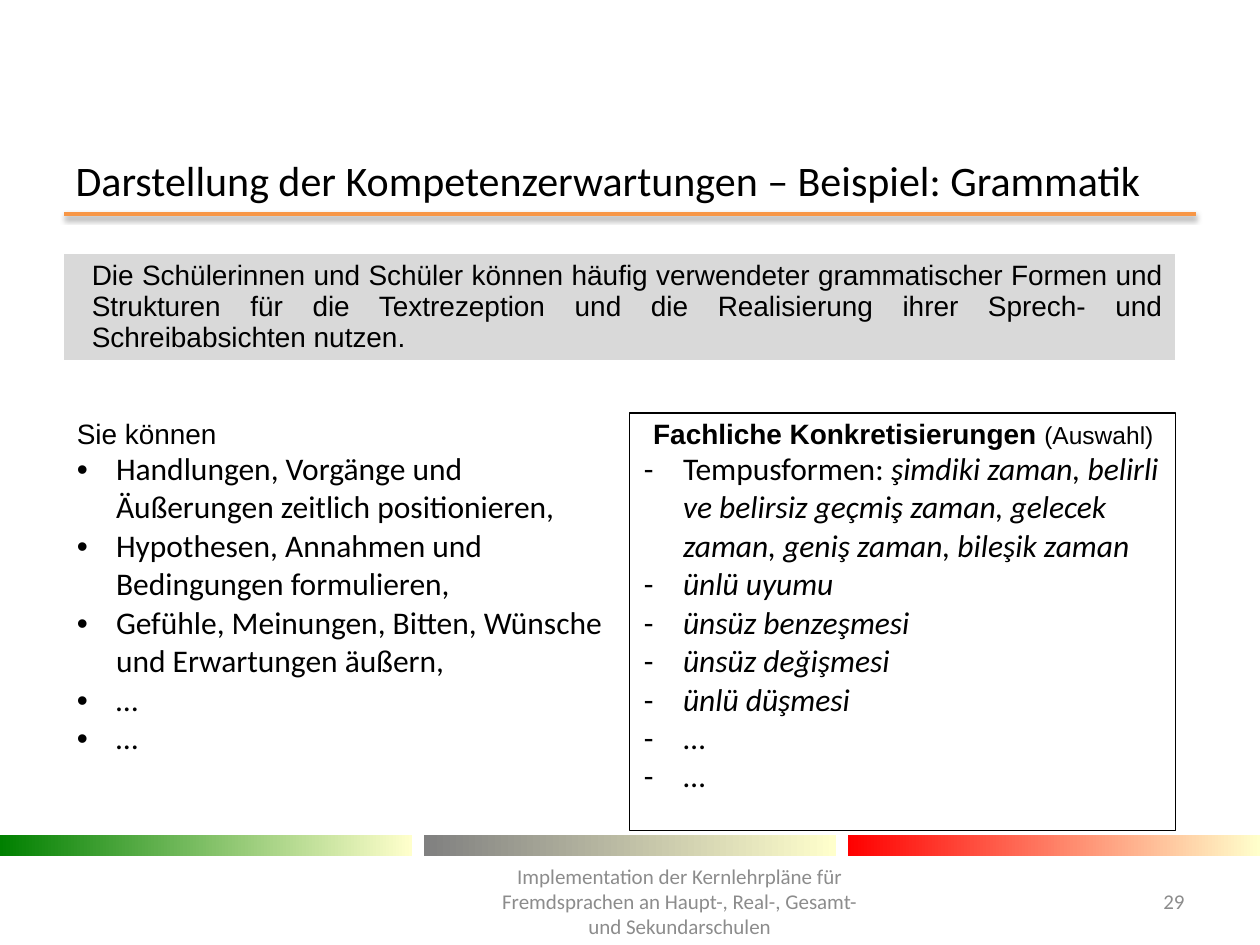
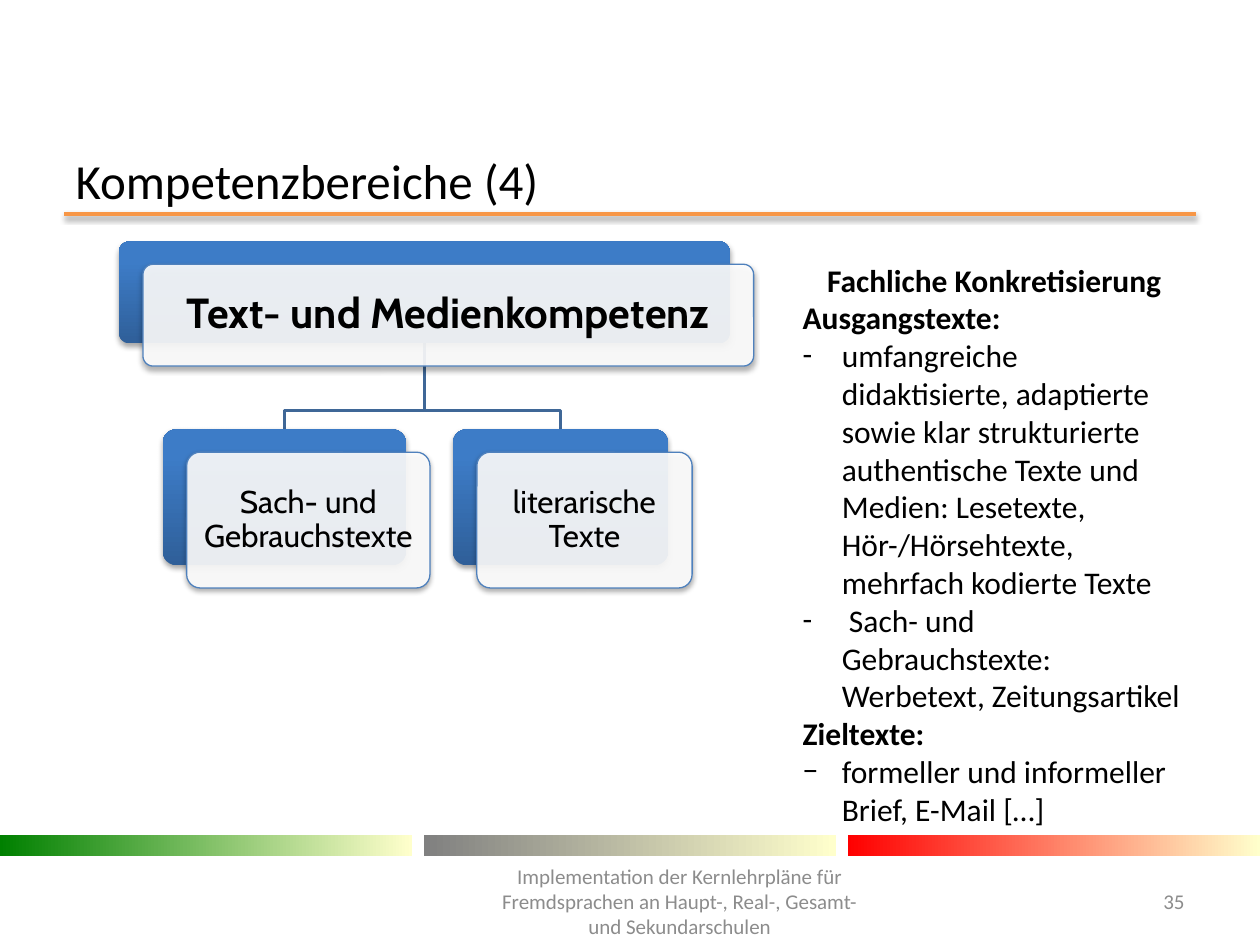
from collections import namedtuple
from lxml import etree
from pptx import Presentation
from pptx.dml.color import RGBColor
from pptx.enum.shapes import MSO_CONNECTOR, MSO_SHAPE
from pptx.enum.text import MSO_ANCHOR, PP_ALIGN
from pptx.oxml.ns import qn
from pptx.util import Pt

LEFT, MID, RIGHT, JUST = PP_ALIGN.LEFT, PP_ALIGN.CENTER, PP_ALIGN.RIGHT, PP_ALIGN.JUSTIFY
CENTER, TOP = MSO_ANCHOR.MIDDLE, MSO_ANCHOR.TOP
RECT, ROUND = MSO_SHAPE.RECTANGLE, MSO_SHAPE.ROUNDED_RECTANGLE
STRAIGHT = MSO_CONNECTOR.STRAIGHT

BLACK = RGBColor(0, 0, 0)
WHITE = RGBColor(255, 255, 255)
GRAY = RGBColor(0x8C, 0x8C, 0x8C)
PALE = RGBColor(0xD9, 0xD9, 0xD9)
ORANGE = RGBColor(0xF7, 0x96, 0x46)
CREAM = RGBColor(0xFF, 0xFF, 0xCC)
BANDS = [RGBColor(0, 0x80, 0), RGBColor(0x80, 0x80, 0x80), RGBColor(255, 0, 0)]
NAVY = RGBColor(0x2F, 0x5F, 0x99)
BLUE = RGBColor(0x3D, 0x7C, 0xC7)
EDGE = RGBColor(0x4F, 0x81, 0xBD)
LINK = RGBColor(0x3F, 0x67, 0x97)

HANG = 22.4
FOOTER = ("Implementation der Kernlehrpläne für Fremdsprachen an "
          "Haupt-, Real-, Gesamt- und Sekundarschulen")

Run = namedtuple("Run", "text size font bold ital", defaults=(18, "Calibri", False, False))
Para = namedtuple("Para", "runs align bullet gap indent", defaults=(LEFT, None, None, 0))


def points(box):
    return [Pt(v) for v in box]


def write(frame, paras, color=BLACK, anchor=TOP):
    frame.word_wrap = True
    frame.vertical_anchor = anchor
    for i, item in enumerate(paras):
        para = frame.paragraphs[0] if i == 0 else frame.add_paragraph()
        para.alignment = item.align
        if item.gap:
            para.line_spacing = item.gap
        prop = para._p.get_or_add_pPr()
        if item.bullet:
            prop.set("marL", str(Pt(HANG)))
            prop.set("indent", str(-Pt(HANG)))
            face = "Arial" if item.bullet == "•" else "Calibri"
            etree.SubElement(prop, qn("a:buFont"), typeface=face)
            etree.SubElement(prop, qn("a:buChar"), char=item.bullet)
        elif item.indent:
            prop.set("marL", str(Pt(item.indent)))
        for part in item.runs:
            run = para.add_run()
            run.text = part.text
            font = run.font
            font.size, font.name = Pt(part.size), part.font
            font.bold, font.italic = part.bold, part.ital
            font.color.rgb = color


def label(slide, box, paras, color=BLACK, anchor=TOP):
    shape = slide.shapes.add_textbox(*points(box))
    write(shape.text_frame, paras, color, anchor)


def block(slide, kind, box):
    shape = slide.shapes.add_shape(kind, *points(box))
    shape.shadow.inherit = False
    shape.line.fill.background()
    return shape


def blend(shape, first, last, angle, end=1.0):
    fill = shape.fill
    fill.gradient()
    fill.gradient_angle = angle
    for stop, color in zip(fill.gradient_stops, (first, last)):
        stop.color.rgb = color
    fill.gradient_stops[1].position = end


def fade(parent, share):
    etree.SubElement(parent, qn("a:alpha"), val=str(share * 1000))


def shade(shape, share=35):
    prop = shape._element.spPr
    effect = prop.find(qn("a:effectLst"))
    if effect is None:
        effect = etree.SubElement(prop, qn("a:effectLst"))
    cast = etree.SubElement(effect, qn("a:outerShdw"), blurRad=str(Pt(3.1)),
                            dist=str(Pt(1.7)), dir="5400000", rotWithShape="0")
    fade(etree.SubElement(cast, qn("a:srgbClr"), val="000000"), share)


def bands(slide, box):
    left, top, width, height = box
    size = 235.4
    step = (width - size) / (len(BANDS) - 1)
    for i, color in enumerate(BANDS):
        shape = block(slide, RECT, (left + i * step, top, size, height))
        blend(shape, color, CREAM, 0)


def base(deck, title, size, page):
    slide = deck.slides.add_slide(deck.slide_layouts[5])
    rule = slide.shapes.add_connector(STRAIGHT, *points((36.7, 122.4, 683.3, 122.4)))
    rule.line.color.rgb, rule.line.width = ORANGE, Pt(2)
    shade(rule, 38)
    bands(slide, (0, 477.4, 720, 11.5))
    head = slide.shapes.title
    head.left, head.top, head.width, head.height = points((36, 88.6, 648, 28))
    write(head.text_frame, [Para([Run(title, size)])], anchor=CENTER)
    for box, text, align in (((275, 500.4, 226.8, 28.8), FOOTER, MID),
                             ((638, 500.4, 46, 28.8), page, RIGHT)):
        label(slide, box, [Para([Run(text, 12)], align)], GRAY, CENTER)
    return slide


def bare(cell):
    prop = cell._tc.get_or_add_tcPr()
    for side in ("a:lnL", "a:lnR", "a:lnT", "a:lnB"):
        line = etree.SubElement(prop, qn(side), w="0")
        etree.SubElement(line, qn("a:noFill"))


def grid(slide, box, intro, skills, topics):
    left, top, width, height = box
    split, upper = 324, (60.6, 30.2)
    rows = (*upper, height - sum(upper))
    table = slide.shapes.add_table(3, 2, *points(box)).table
    table.first_row = table.horz_banding = False
    for col, size in zip(table.columns, (split, width - split)):
        col.width = Pt(size)
    for row, size in zip(table.rows, rows):
        row.height = Pt(size)
    for cell in table.iter_cells():
        bare(cell)
    for i, color in enumerate((PALE, WHITE)):
        for cell in table.rows[i].cells:
            cell.fill.solid()
            cell.fill.fore_color.rgb = color
        table.cell(i, 0).merge(table.cell(i, 1))
    for cell in table.rows[1].cells:
        cell.margin_top = cell.margin_bottom = 0
    write(table.cell(0, 0).text_frame, intro)
    for i, paras in enumerate((skills, topics)):
        cell = table.cell(2, i)
        cell.fill.background()
        write(cell.text_frame, paras)
    frame = block(slide, RECT, (left + split - 1, top + sum(upper),
                                width - split + 1, rows[2]))
    frame.fill.background()
    frame.line.color.rgb, frame.line.width = BLACK, Pt(1)


def card(slide, box, text, size, bold, inset):
    left, top, width, height = box
    back = block(slide, ROUND, box)
    blend(back, NAVY, BLUE, 90, 0.8)
    front = block(slide, ROUND, (left + 13.7, top + 13, width, height))
    front.fill.solid()
    front.fill.fore_color.rgb = WHITE
    fade(front._element.spPr.find(qn("a:solidFill"))[0], 90)
    front.line.color.rgb, front.line.width = EDGE, Pt(0.75)
    for shape in (back, front):
        shape.adjustments[0] = 0.1
        shade(shape)
    frame = front.text_frame
    frame.margin_left = frame.margin_right = Pt(inset)
    frame.margin_top = frame.margin_bottom = Pt(inset)
    write(frame, [Para([Run(text, size, "Cabin", bold)], MID, gap=0.9)], anchor=CENTER)


def branch(slide, start, end):
    (x, y), (far, low) = start, end
    bend = low - 10.8
    path = slide.shapes.build_freeform(Pt(x), Pt(y))
    path.add_line_segments([(Pt(x), Pt(bend)), (Pt(far), Pt(bend)), (Pt(far), Pt(low))],
                           close=False)
    shape = path.convert_to_shape()
    shape.shadow.inherit = False
    shape.fill.background()
    shape.line.color.rgb, shape.line.width = LINK, Pt(2)


def tree(slide, box, root, leaves):
    left, top, width, height = box
    trunk, low = 58.2, 77.6
    row = top + height - low
    spots = [(left + x, row, size, low) for x, size, _ in leaves]
    for x, y, size, _ in reversed(spots):
        branch(slide, (left + width / 2, top + trunk), (x + size / 2, y))
    card(slide, (left, top, width, trunk), root, 24, True, 7.2)
    for spot, leaf in zip(spots, leaves):
        card(slide, spot, leaf[2], 18, False, 5)


def items(mark, texts, ital=False):
    return [Para([Run(text, ital=ital)], bullet=mark) for text in texts]


def grammar(deck):
    slide = base(deck, "Darstellung der Kompetenzerwartungen – Beispiel: Grammatik", 24, "29")
    intro = [Para([Run("Die Schülerinnen und Schüler können häufig verwendeter "
                       "grammatischer Formen und Strukturen für die Textrezeption und "
                       "die Realisierung ihrer Sprech- und Schreibabsichten nutzen.",
                       16, "Arial")], JUST, gap=Pt(17.8), indent=8.6)]
    skills = [Para([Run("Sie können", 16, "Arial")])]
    skills += items("•", [
        "Handlungen, Vorgänge und Äußerungen zeitlich positionieren,",
        "Hypothesen, Annahmen und Bedingungen formulieren,",
        "Gefühle, Meinungen, Bitten, Wünsche und Erwartungen äußern,",
        "…", "…"])
    topics = [Para([Run("Fachliche Konkretisierungen ", 16, "Arial", True),
                    Run("(Auswahl)", 14, "Arial")], MID),
              Para([Run("Tempusformen: "),
                    Run("şimdiki zaman, belirli ve belirsiz geçmiş zaman, gelecek zaman, "
                        "geniş zaman, bileşik zaman", ital=True)], bullet="-")]
    topics += items("-", ["ünlü uyumu", "ünsüz benzeşmesi", "ünsüz değişmesi",
                          "ünlü düşmesi", "...", "..."], True)
    grid(slide, (36.7, 145.2, 635, 329.4), intro, skills, topics)


def fields(deck):
    slide = base(deck, "Kompetenzbereiche (4)", 28, "35")
    tree(slide, (68, 138, 349, 185), "Text- und Medienkompetenz",
         [(25, 139, "Sach- und Gebrauchstexte"), (190.8, 123, "literarische Texte")])
    paras = [Para([Run("Fachliche Konkretisierung", bold=True)], MID),
             Para([Run("Ausgangstexte:", bold=True)])]
    paras += items("-", [
        "umfangreiche didaktisierte, adaptierte sowie klar strukturierte authentische "
        "Texte und Medien: Lesetexte, Hör-/Hörsehtexte, mehrfach kodierte Texte",
        " Sach- und Gebrauchstexte: Werbetext, Zeitungsartikel"])
    paras.append(Para([Run("Zieltexte:", bold=True)]))
    paras += items("−", ["formeller und informeller Brief, E-Mail […]"])
    label(slide, (451.6, 145.4, 233.2, 334), paras)


def main():
    deck = Presentation()
    deck.slide_width, deck.slide_height = Pt(720), Pt(540)
    grammar(deck)
    fields(deck)
    deck.save("out.pptx")


if __name__ == "__main__":
    main()
